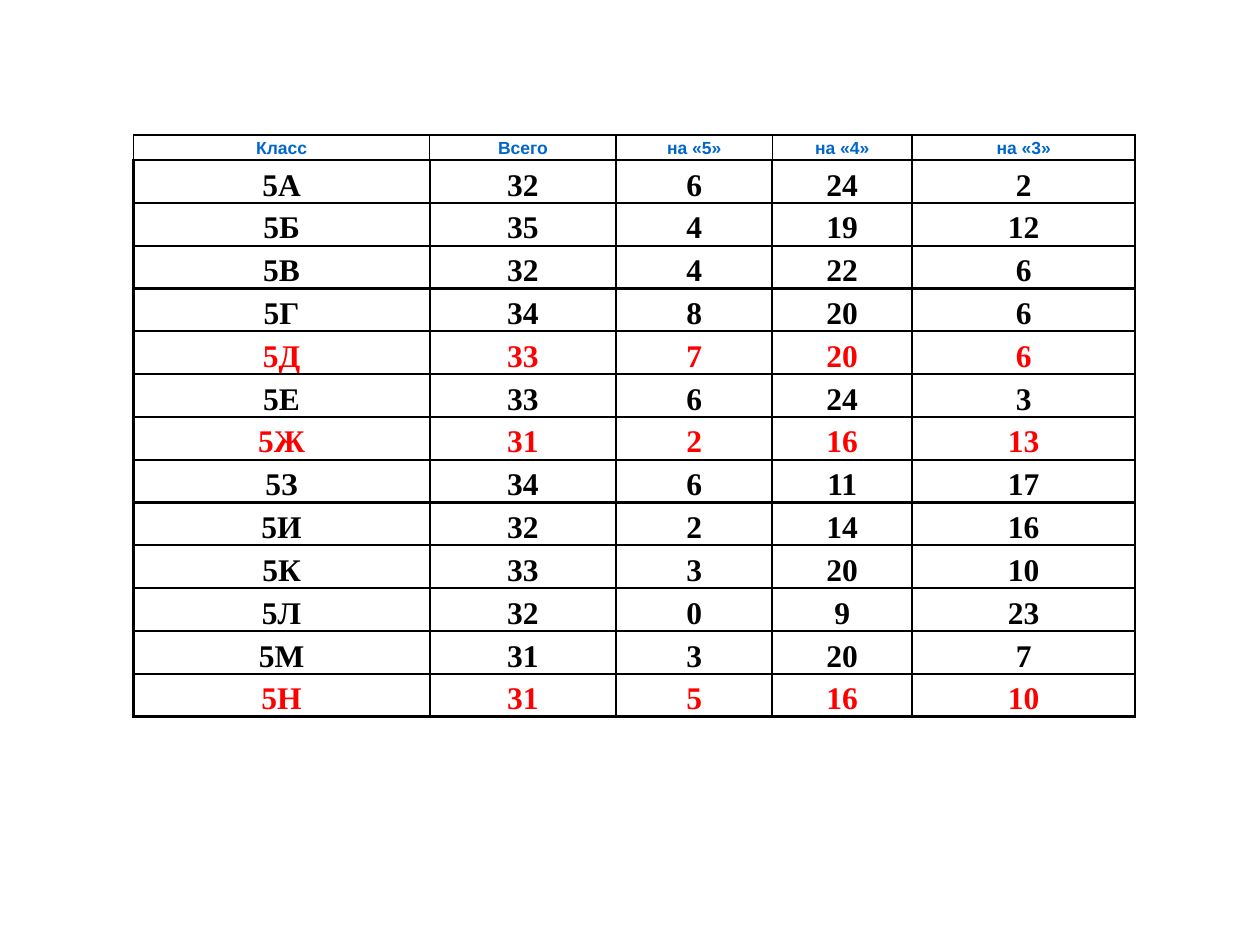
from lxml.etree import SubElement
from pptx import Presentation
from pptx.dml.color import RGBColor
from pptx.enum.text import MSO_ANCHOR, PP_ALIGN
from pptx.oxml.ns import qn
from pptx.util import Inches, Pt

BLACK = RGBColor(0x00, 0x00, 0x00)
WHITE = RGBColor(0xFF, 0xFF, 0xFF)
BLUE = RGBColor(0x00, 0x66, 0xCC)
RED = RGBColor(0xFF, 0x00, 0x00)

HEADINGS = ("Класс", "Всего", "на «5»", "на «4»", "на «3»")
RESULTS = (
    ("5А", 32, 6, 24, 2),
    ("5Б", 35, 4, 19, 12),
    ("5В", 32, 4, 22, 6),
    ("5Г", 34, 8, 20, 6),
    ("5Д", 33, 7, 20, 6),
    ("5Е", 33, 6, 24, 3),
    ("5Ж", 31, 2, 16, 13),
    ("5З", 34, 6, 11, 17),
    ("5И", 32, 2, 14, 16),
    ("5К", 33, 3, 20, 10),
    ("5Л", 32, 0, 9, 23),
    ("5М", 31, 3, 20, 7),
    ("5Н", 31, 5, 16, 10),
)
HIGHLIGHTED = {"5Д", "5Ж", "5Н"}
COLUMN_WIDTHS = (2.35, 1.48, 1.24, 1.11, 1.77)
ROW_HEIGHTS = (0.2,) + (0.34,) * len(RESULTS)

HEADING_FONT = {"name": "Arial", "size": Pt(10), "bold": True}
RESULT_FONT = {"name": "Times New Roman", "size": Pt(18), "bold": True}
CELL_FORMAT = {
    "margin_left": Inches(0.01),
    "margin_right": Inches(0.01),
    "margin_top": Inches(0.01),
    "margin_bottom": 0,
}


def add_border(cell, side, width):
    properties = cell._tc.get_or_add_tcPr()
    line = SubElement(properties, qn(f"a:ln{side}"), w=str(Pt(width)))
    fill = SubElement(line, qn("a:solidFill"))
    SubElement(fill, qn("a:srgbClr"), val=str(BLACK))


presentation = Presentation()
presentation.slide_width = Inches(10)
presentation.slide_height = Inches(7.5)
slide = presentation.slides.add_slide(presentation.slide_layouts[6])

table = slide.shapes.add_table(
    len(ROW_HEIGHTS), len(COLUMN_WIDTHS), Inches(1.06), Inches(1.07),
    Inches(sum(COLUMN_WIDTHS)), Inches(sum(ROW_HEIGHTS)),
).table
table.first_row = False
table.horz_banding = False
for column, width in zip(table.columns, COLUMN_WIDTHS):
    column.width = Inches(width)
for row, height in zip(table.rows, ROW_HEIGHTS):
    row.height = Inches(height)

for row_index, values in enumerate((HEADINGS, *RESULTS)):
    is_heading = row_index == 0
    font_format = HEADING_FONT if is_heading else RESULT_FONT
    if is_heading:
        color = BLUE
    else:
        color = RED if values[0] in HIGHLIGHTED else BLACK
    side_width = 1 if is_heading else 1.5
    top_width = 1 if row_index <= 1 else 1.5

    for column_index, value in enumerate(values):
        cell = table.cell(row_index, column_index)
        for name, setting in CELL_FORMAT.items():
            setattr(cell, name, setting)
        cell.vertical_anchor = MSO_ANCHOR.MIDDLE if is_heading else MSO_ANCHOR.BOTTOM
        for side, width in zip("LRTB", (side_width, side_width, top_width, side_width)):
            add_border(cell, side, width)
        cell.fill.solid()
        cell.fill.fore_color.rgb = WHITE

        paragraph = cell.text_frame.paragraphs[0]
        paragraph.alignment = PP_ALIGN.CENTER
        run = paragraph.add_run()
        run.text = str(value)
        for name, setting in font_format.items():
            setattr(run.font, name, setting)
        run.font.color.rgb = color

presentation.save("out.pptx")
